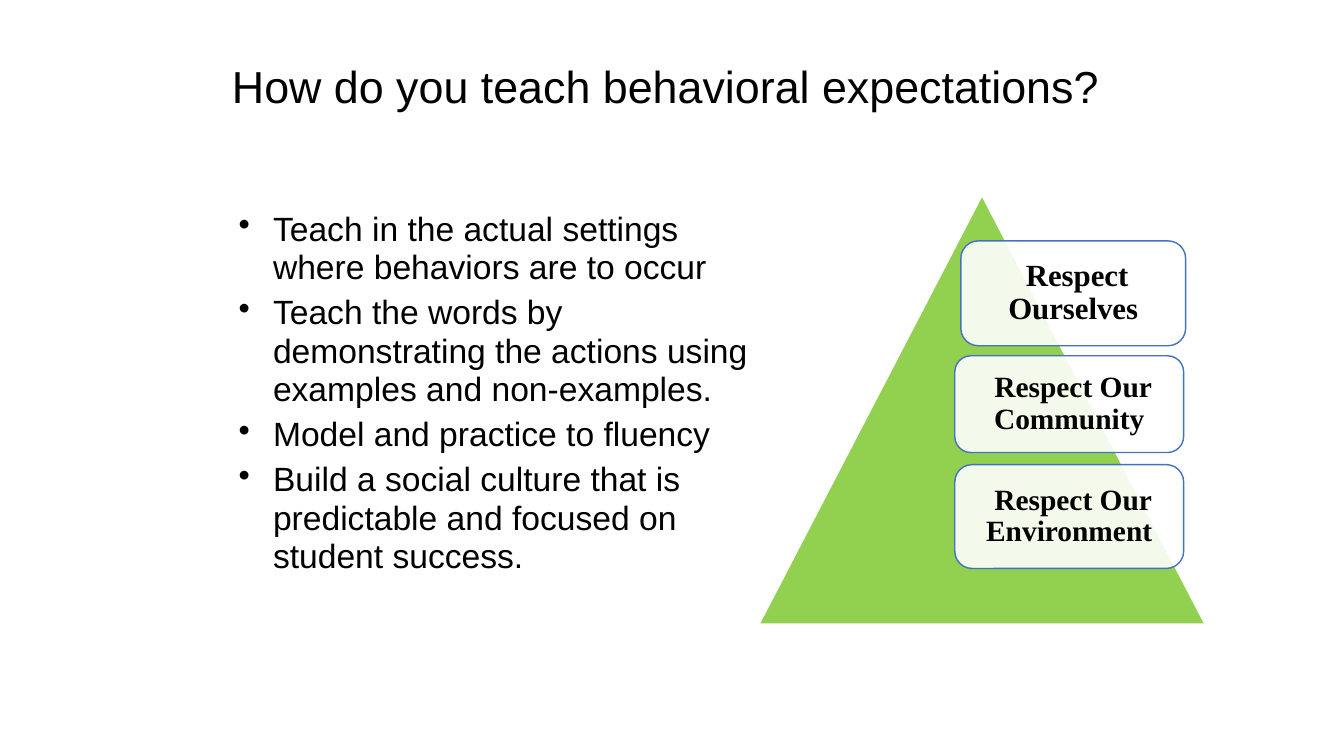
from lxml import etree
from pptx import Presentation
from pptx.dml.color import RGBColor
from pptx.enum.shapes import MSO_SHAPE
from pptx.enum.text import MSO_ANCHOR, PP_ALIGN
from pptx.oxml.ns import qn
from pptx.util import Inches, Pt

TRIANGLE = MSO_SHAPE.ISOSCELES_TRIANGLE
ROUNDED = MSO_SHAPE.ROUNDED_RECTANGLE
MIDDLE = MSO_ANCHOR.MIDDLE
TOP = MSO_ANCHOR.TOP
CENTER = PP_ALIGN.CENTER
LEFT = PP_ALIGN.LEFT

COLORS = {"green": "92D050", "white": "FFFFFF", "blue": "4372C3", "black": "000000"}

TITLE = "How do you teach behavioral expectations?"
POINTS = [
    "Teach in the actual settings where behaviors are to occur",
    "Teach the words by demonstrating the actions using examples and non-examples.",
    "Model and practice to fluency",
    "Build a social culture that is predictable and focused on student success.",
]
VALUES = [
    (" Respect Ourselves", 22, (9.53, 2.39, 2.23, 1.04)),
    (" Respect Our Community", 21, (9.47, 3.53, 2.27, 0.96)),
    (" Respect Our Environment", 21, (9.47, 4.61, 2.27, 1.03)),
]


def color(name):
    """Return the named colour."""
    return RGBColor.from_string(COLORS[name])


def set_frame(frame, pad_x, pad_y, anchor):
    """Set wrapping, margins and anchor of a text frame."""
    frame.word_wrap = True
    frame.margin_left = frame.margin_right = Inches(pad_x)
    frame.margin_top = frame.margin_bottom = Inches(pad_y)
    frame.vertical_anchor = anchor


def style(para, size, font, spacing, align=LEFT, bold=False):
    """Format a paragraph and its runs."""
    para.alignment = align
    para.line_spacing = spacing
    for run in para.runs:
        run.font.size = Pt(size)
        run.font.name = font
        run.font.bold = bold
        run.font.color.rgb = color("black")


def add_bullet(para):
    """Give a paragraph a hanging bullet."""
    props = para._p.get_or_add_pPr()
    props.set("marL", str(Inches(0.75)))
    props.set("indent", str(Inches(-0.34)))
    etree.SubElement(props, qn("a:buChar")).set("char", "•")


def add_shape(slide, kind, box, fill, line):
    """Add a filled and outlined shape."""
    shape = slide.shapes.add_shape(kind, *map(Inches, box))
    shape.shadow.inherit = False
    shape.fill.solid()
    shape.fill.fore_color.rgb = color(fill)
    shape.line.color.rgb = color(line)
    shape.line.width = Pt(1)
    return shape


def add_value(slide, text, size, box):
    """Add a translucent card naming one value."""
    card = add_shape(slide, ROUNDED, box, "white", "blue")
    tint = card.fill._xPr.find(".//" + qn("a:srgbClr"))
    etree.SubElement(tint, qn("a:alpha")).set("val", "89000")
    frame = card.text_frame
    set_frame(frame, 0.09, 0.09, MIDDLE)
    frame.text = text
    style(frame.paragraphs[0], size, "Times New Roman", 0.9, CENTER, True)


def add_title(slide, text):
    """Add the slide heading."""
    box = map(Inches, (2.3, 0.62, 8.92, 0.81))
    frame = slide.shapes.add_textbox(*box).text_frame
    set_frame(frame, 0, 0, TOP)
    frame.text = text
    style(frame.paragraphs[0], 32, "Arial", 0.95)


def add_points(slide, points):
    """Add the bulleted list."""
    box = map(Inches, (1.86, 2.04, 5.67, 4.15))
    frame = slide.shapes.add_textbox(*box).text_frame
    set_frame(frame, 0.1, 0.05, TOP)
    frame.text = "\n".join(points)
    for i, para in enumerate(frame.paragraphs):
        style(para, 24, "Arial", 0.95)
        para.space_before = Pt(5 if i else 0)
        add_bullet(para)


def main():
    """Build and save the slide."""
    deck = Presentation()
    deck.slide_width, deck.slide_height = Inches(13.33), Inches(7.5)
    slide = deck.slides.add_slide(deck.slide_layouts[6])
    add_shape(slide, TRIANGLE, (7.53, 1.94, 4.42, 4.25), "green", "white")
    for text, size, box in VALUES:
        add_value(slide, text, size, box)
    add_title(slide, TITLE)
    add_points(slide, POINTS)
    deck.save("out.pptx")


if __name__ == "__main__":
    main()
